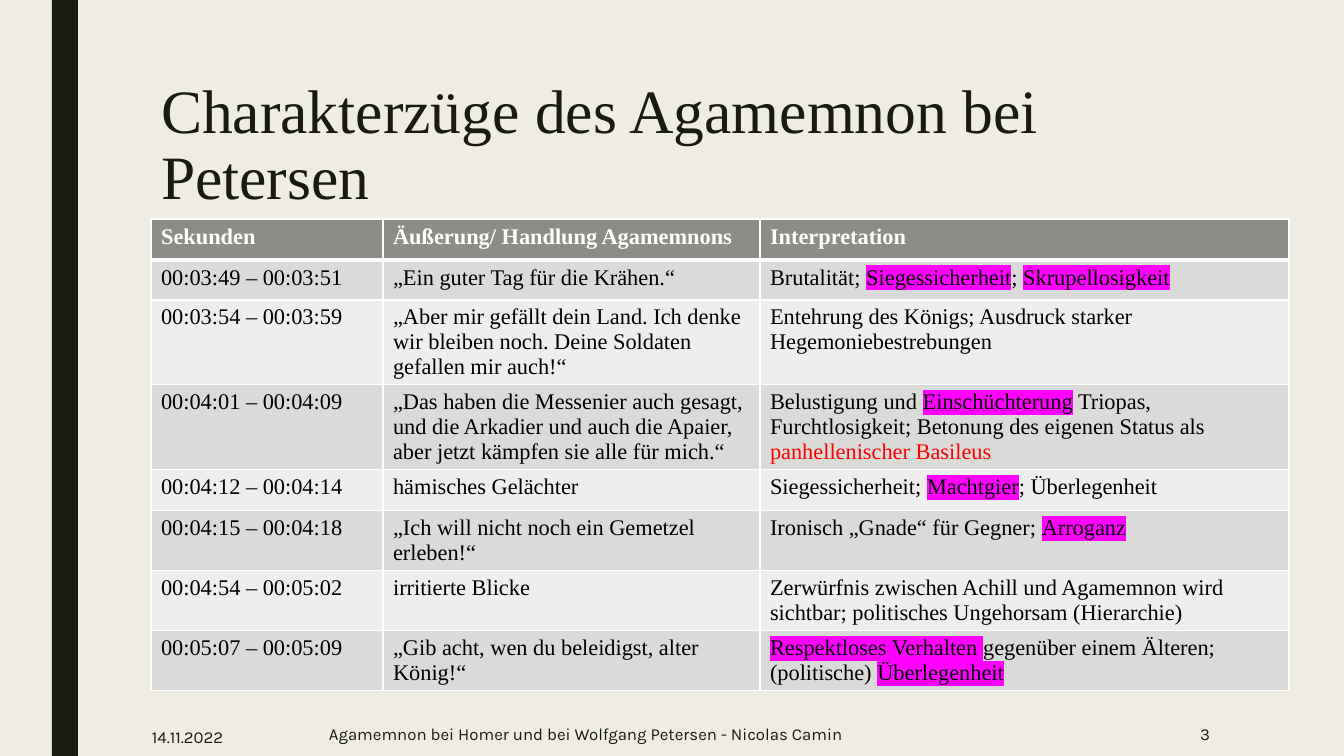
"""Builds the slide on Agamemnon's traits in Petersen's film."""
import pptx
import pptx.dml.color
import pptx.enum.shapes
import pptx.enum.text
import pptx.oxml
import pptx.oxml.ns
import pptx.util

PAGE_WIDTH, PAGE_HEIGHT = 1344, 756
SCALE = 12192000 / PAGE_WIDTH
SERIF, SANS = "Times New Roman", "Karla"
PAPER, INK, WHITE, BLACK = "EFEDE3", "191B0E", "FFFFFF", "000000"
HEADER_FILL, BAND_FILLS = "8C8D86", ("DADBD9", "EEEEED")
RED, MAGENTA = "FF0000", "FF00FF"

TITLE = "Charakterzüge des Agamemnon bei Petersen"
COLUMNS = (232, 377, 529)
ROW_HEIGHTS = (41, 40, 85, 85, 41, 60, 60, 60)
HEADER = ("Sekunden", "Äußerung/ Handlung Agamemnons", "Interpretation")
SCENES = [
    ("00:03:49 – 00:03:51", "„Ein guter Tag für die Krähen.“",
     ["Brutalität; ", ("Siegessicherheit", "mark"), "; ", ("Skrupellosigkeit", "mark")]),
    ("00:03:54 – 00:03:59",
     "„Aber mir gefällt dein Land. Ich denke wir bleiben noch. Deine Soldaten gefallen mir auch!“",
     "Entehrung des Königs; Ausdruck starker Hegemoniebestrebungen"),
    ("00:04:01 – 00:04:09",
     "„Das haben die Messenier auch gesagt, und die Arkadier und auch die Apaier, "
     "aber jetzt kämpfen sie alle für mich.“",
     ["Belustigung und ", ("Einschüchterung", "mark"),
      " Triopas, Furchtlosigkeit; Betonung des eigenen Status als ",
      ("panhellenischer Basileus", "red")]),
    ("00:04:12 – 00:04:14", "hämisches Gelächter",
     ["Siegessicherheit; ", ("Machtgier", "mark"), "; Überlegenheit"]),
    ("00:04:15 – 00:04:18", "„Ich will nicht noch ein Gemetzel erleben!“",
     ["Ironisch „Gnade“ für Gegner; ", ("Arroganz", "mark")]),
    ("00:04:54 – 00:05:02", "irritierte Blicke",
     "Zerwürfnis zwischen Achill und Agamemnon wird sichtbar; "
     "politisches Ungehorsam (Hierarchie)"),
    ("00:05:07 – 00:05:09", "„Gib acht, wen du beleidigst, alter König!“",
     [("Respektloses Verhalten ", "mark"), "gegenüber einem Älteren; (politische) ",
      ("Überlegenheit", "mark")]),
]
FOOTERS = [
    ("14.11.2022", (142, 715, 133, 44), "LEFT"),
    ("Agamemnon bei Homer und bei Wolfgang Petersen - Nicolas Camin",
     (319, 712, 692, 44), "LEFT"),
    ("3", (1044, 712, 176, 44), "RIGHT"),
]


def px(length):
    return pptx.util.Emu(round(length * SCALE))


def colour(value):
    return pptx.dml.color.RGBColor.from_string(value)


def paint(fill, value):
    fill.solid()
    fill.fore_color.rgb = colour(value)


def style(span, font, size, value, bold=False):
    span.font.name = font
    span.font.size = pptx.util.Pt(size)
    span.font.bold = bold
    span.font.color.rgb = colour(value)


def element(tag, attributes, value):
    namespace = pptx.oxml.ns.nsdecls("a")
    return pptx.oxml.parse_xml(
        f'<a:{tag} {namespace} {attributes}>{value}</a:{tag}>')


def highlight(span):
    fill = span.font._element.find(pptx.oxml.ns.qn("a:solidFill"))
    fill.addnext(element("highlight", "", f'<a:srgbClr val="{MAGENTA}"/>'))


def add_borders(cell, bottom):
    properties = cell._tc.get_or_add_tcPr()
    line = f'<a:solidFill><a:srgbClr val="{WHITE}"/></a:solidFill>'
    widths = (("lnL", 1), ("lnR", 1), ("lnT", 1), ("lnB", bottom))
    for place, (tag, width) in enumerate(widths):
        properties.insert(place, element(tag, f'w="{pptx.util.Pt(width)}"', line))


def fill_cell(cell, content, is_header, background):
    para = cell.text_frame.paragraphs[0]
    for part in [content] if isinstance(content, str) else content:
        text, kind = (part, "plain") if isinstance(part, str) else part
        span = para.add_run()
        span.text = text
        value = WHITE if is_header else RED if kind == "red" else BLACK
        style(span, SERIF, 16, value, is_header)
        if kind == "mark":
            highlight(span)
    paint(cell.fill, background)
    add_borders(cell, 3 if is_header else 1)


def add_title(page):
    title = page.shapes.title
    title.left, title.top, title.width, title.height = map(px, (151, 76, 1058, 163))
    frame = title.text_frame
    frame.text = TITLE
    frame.word_wrap = True
    frame.auto_size = pptx.enum.text.MSO_AUTO_SIZE.NONE
    frame.vertical_anchor = pptx.enum.text.MSO_ANCHOR.TOP
    para = frame.paragraphs[0]
    para.alignment = pptx.enum.text.PP_ALIGN.LEFT
    para.line_spacing = 0.89
    style(para.runs[0], SERIF, 44, INK)


def add_scene_table(page):
    rows = [HEADER, *SCENES]
    table = page.shapes.add_table(
        len(rows), len(COLUMNS), px(151), px(219),
        px(sum(COLUMNS)), px(sum(ROW_HEIGHTS))).table
    for column, width in zip(table.columns, COLUMNS):
        column.width = px(width)
    for index, (row, height) in enumerate(zip(rows, ROW_HEIGHTS)):
        table.rows[index].height = px(height)
        background = BAND_FILLS[(index - 1) % 2] if index else HEADER_FILL
        for cell, content in zip(table.rows[index].cells, row):
            fill_cell(cell, content, index == 0, background)


def add_footer(page, text, place, alignment):
    box = page.shapes.add_textbox(*map(px, place))
    frame = box.text_frame
    frame.text = text
    frame.word_wrap = True
    frame.vertical_anchor = pptx.enum.text.MSO_ANCHOR.MIDDLE
    para = frame.paragraphs[0]
    para.alignment = pptx.enum.text.PP_ALIGN[alignment]
    style(para.runs[0], SANS, 12, INK)


def main():
    deck = pptx.Presentation()
    deck.slide_width, deck.slide_height = px(PAGE_WIDTH), px(PAGE_HEIGHT)
    page = deck.slides.add_slide(deck.slide_layouts.get_by_name("Title Only"))
    paint(page.background.fill, PAPER)
    stripe = page.shapes.add_shape(
        pptx.enum.shapes.MSO_SHAPE.RECTANGLE, px(52), px(0), px(26), px(PAGE_HEIGHT))
    stripe.shadow.inherit = False
    paint(stripe.fill, INK)
    stripe.line.fill.background()
    add_title(page)
    add_scene_table(page)
    for footer in FOOTERS:
        add_footer(page, *footer)
    deck.save("out.pptx")


if __name__ == "__main__":
    main()
